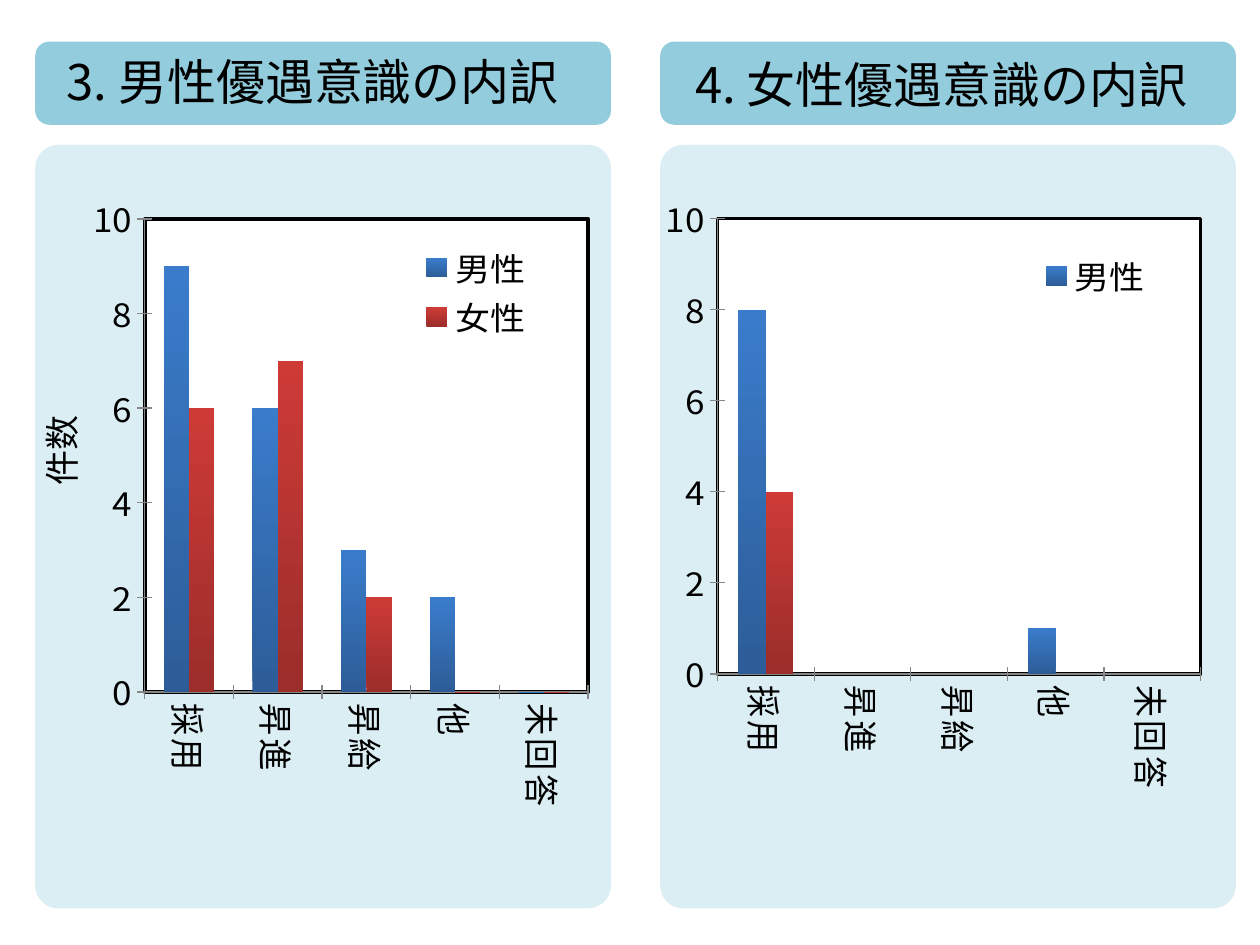
from dataclasses import dataclass

from lxml import etree
from pptx import Presentation
from pptx.chart.data import CategoryChartData
from pptx.dml.color import RGBColor
from pptx.enum.chart import XL_CHART_TYPE, XL_LEGEND_POSITION, XL_TICK_MARK
from pptx.enum.shapes import MSO_SHAPE
from pptx.oxml import parse_xml
from pptx.oxml.ns import nsdecls, qn
from pptx.util import Pt

CLUSTERED = XL_CHART_TYPE.COLUMN_CLUSTERED
ROUNDED = MSO_SHAPE.ROUNDED_RECTANGLE
LEGEND_RIGHT = XL_LEGEND_POSITION.RIGHT
TICK_CROSS = XL_TICK_MARK.CROSS


@dataclass(frozen=True)
class Theme:
    font: str = "Noto Sans CJK JP"
    title_size: int = 28
    chart_size: int = 20
    text: str = "000000"
    panel: str = "DBEEF4"
    header: str = "93CDDD"
    axis: str = "868686"
    plot: str = "FFFFFF"
    bars: tuple = (("2C5D98", "3A7CCB"), ("9B2D2A", "CE3B37"))


THEME = Theme()
CATEGORIES = ["採用", "昇進", "昇給", "他", "未回答"]
PANEL_LEFTS = (20.16, 377.28)
PANEL_WIDTH = 329


def rgb(value):
    return RGBColor.from_string(value)


def style_font(font, size):
    font.name = THEME.font
    font.size = Pt(size)
    font.color.rgb = rgb(THEME.text)


def add_panel(slide, left, top, height, color, rounding):
    shape = slide.shapes.add_shape(
        ROUNDED, Pt(left), Pt(top), Pt(PANEL_WIDTH), Pt(height))
    shape.adjustments[0] = rounding
    shape.fill.solid()
    shape.fill.fore_color.rgb = rgb(color)
    shape.line.fill.background()
    shape.shadow.inherit = False


def add_label(slide, text, box, size, rotation=0):
    label = slide.shapes.add_textbox(*map(Pt, box))
    label.rotation = rotation
    label.text_frame.word_wrap = False
    paragraph = label.text_frame.paragraphs[0]
    paragraph.text = text
    style_font(paragraph.font, size)
    for run in paragraph.runs:
        east_asian = etree.SubElement(run.font._element, qn("a:ea"))
        east_asian.set("typeface", THEME.font)


def manual_layout(box, inner=False):
    target = '<c:layoutTarget val="inner"/>' if inner else ""
    modes = "".join(f'<c:{name}Mode val="edge"/>' for name in "xy")
    sizes = "".join(
        f'<c:{name} val="{value}"/>' for name, value in zip("xywh", box))
    return parse_xml(
        f'<c:layout {nsdecls("c")}><c:manualLayout>{target}{modes}{sizes}'
        "</c:manualLayout></c:layout>")


def style_plot_area(chart, box):
    plot_area = chart._chartSpace.chart.plotArea
    for layout in plot_area.findall(qn("c:layout")):
        plot_area.remove(layout)
    plot_area.insert(0, manual_layout(box, inner=True))
    plot_area.append(parse_xml(
        f'<c:spPr {nsdecls("c", "a")}>'
        f'<a:solidFill><a:srgbClr val="{THEME.plot}"/></a:solidFill>'
        f'<a:ln w="{Pt(2)}"><a:solidFill><a:srgbClr val="{THEME.text}"/>'
        "</a:solidFill></a:ln></c:spPr>"))


def style_axes(chart):
    for axis in (chart.category_axis, chart.value_axis):
        axis.major_tick_mark = TICK_CROSS
        axis.has_major_gridlines = False
        axis.format.line.color.rgb = rgb(THEME.axis)
        style_font(axis.tick_labels.font, THEME.chart_size)
    chart.value_axis.minimum_scale = 0
    chart.value_axis.maximum_scale = 10
    chart.value_axis.major_unit = 2
    body = chart.category_axis._element.find(qn("c:txPr")).find(qn("a:bodyPr"))
    body.set("rot", "5400000")
    body.set("vert", "horz")


def style_bars(plot):
    plot.gap_width = 150
    plot.overlap = 0
    plot.vary_by_categories = False
    for series, colors in zip(plot.series, THEME.bars):
        fill = series.format.fill
        fill.gradient()
        fill.gradient_angle = 90
        for stop, color in zip(fill.gradient_stops, colors):
            stop.color.rgb = rgb(color)


def style_legend(chart, box, hidden_entries):
    chart.has_legend = True
    legend = chart.legend
    legend.position = LEGEND_RIGHT
    legend.include_in_layout = False
    style_font(legend.font, THEME.chart_size)
    element = legend._element
    for layout in element.findall(qn("c:layout")):
        element.remove(layout)
    element.insert(1, manual_layout(box))
    for index in hidden_entries:
        element.insert(1, parse_xml(
            f'<c:legendEntry {nsdecls("c")}><c:idx val="{index}"/>'
            '<c:delete val="1"/></c:legendEntry>'))


def add_bar_chart(slide, box, values, plot_box, legend_box, hidden_entries=()):
    data = CategoryChartData()
    data.categories = CATEGORIES
    for name, numbers in zip(("男性", "女性"), values):
        data.add_series(name, numbers)
    chart = slide.shapes.add_chart(CLUSTERED, *map(Pt, box), data).chart
    chart.has_title = False
    style_font(chart.font, THEME.chart_size)
    style_axes(chart)
    style_bars(chart.plots[0])
    style_plot_area(chart, plot_box)
    style_legend(chart, legend_box, hidden_entries)


def main():
    presentation = Presentation()
    presentation.slide_width = Pt(720)
    presentation.slide_height = Pt(540)
    slide = presentation.slides.add_slide(presentation.slide_layouts[6])

    for left in PANEL_LEFTS:
        add_panel(slide, left, 82.8, 436.3, THEME.panel, 0.04)
        add_panel(slide, left, 23.8, 47.5, THEME.header, 0.17)

    add_label(slide, "3. 男性優遇意識の内訳", (31, 25.9, 302.4, 41), THEME.title_size)
    add_label(slide, "4. 女性優遇意識の内訳", (390.2, 27.4, 303.1, 41), THEME.title_size)

    add_bar_chart(
        slide, (PANEL_LEFTS[0], 111.6, 321.1, 346.3),
        ((9, 6, 3, 2, 0), (6, 7, 2, 0, 0)),
        (0.195, 0.018, 0.789, 0.849), (0.66, 0.06, 0.25, 0.18))
    add_bar_chart(
        slide, (PANEL_LEFTS[1], 111.6, 321.1, 335.5),
        ((8, 0, 0, 1, 0), (4, 0, 0, 0, 0)),
        (0.102, 0.018, 0.86, 0.849), (0.65, 0.08, 0.25, 0.09),
        hidden_entries=(1,))

    add_label(slide, "件数", (0, 249.1, 54.7, 15.8), THEME.chart_size, rotation=270)
    presentation.save("out.pptx")


if __name__ == "__main__":
    main()
